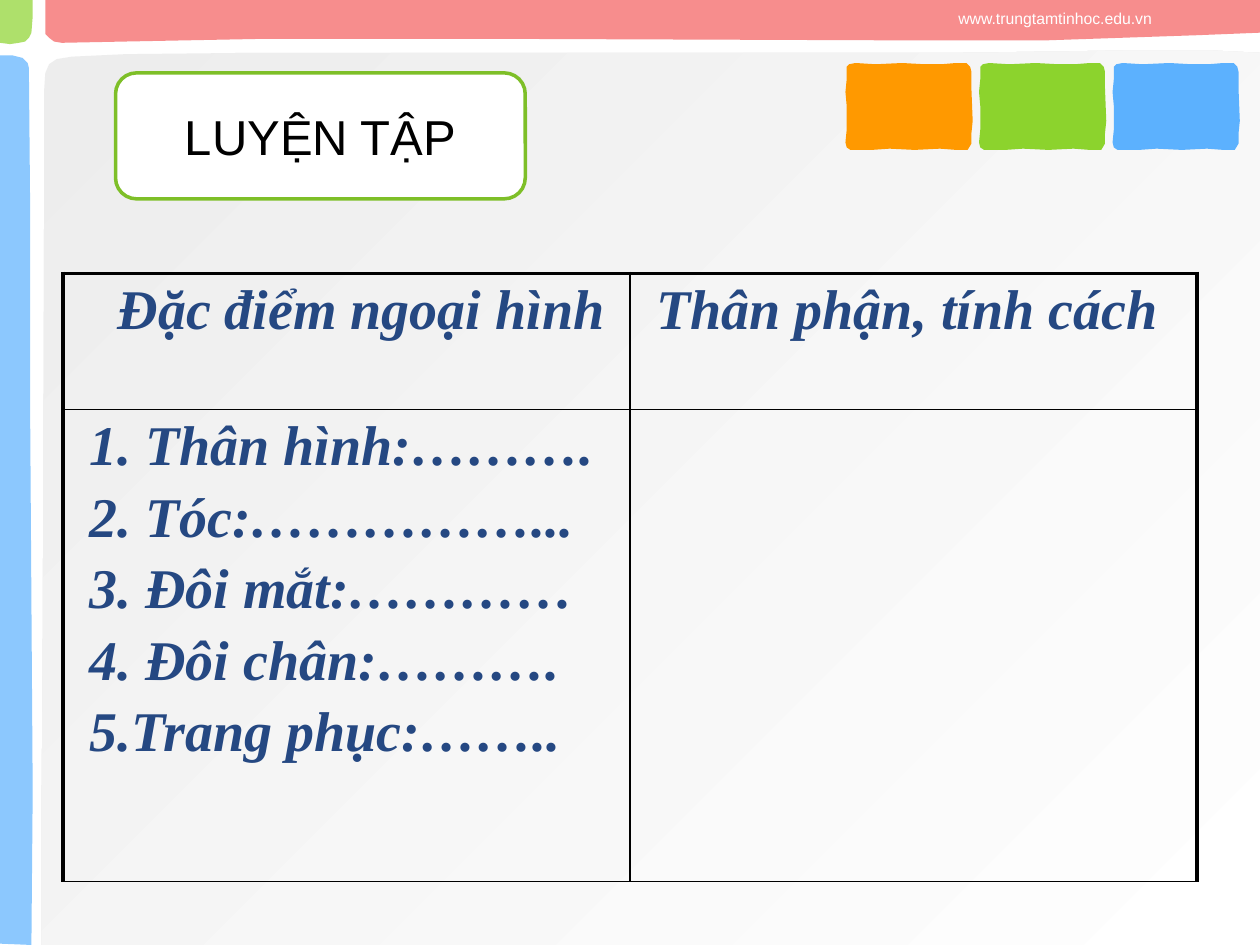
"""Build the practice slide on character appearance and personality."""
from lxml import etree
from pptx import Presentation
from pptx.dml.color import RGBColor
from pptx.enum import shapes, text
from pptx.oxml import ns
from pptx.util import Cm, Pt

COLOURS = {
    "sheet": "E6E6E6", "white": "FFFFFF", "black": "000000", "red": "F45E5E",
    "blue": "5CB1FE", "green": "8CD32D", "orange": "FF9900",
    "ink": "254882", "frame": "7EBF28",
}
HUNDREDTH = Cm(2.54) / 100


def write(para, words, size, colour, font="Arial", bold=False, italic=False,
          align=text.PP_ALIGN.LEFT, before=0):
    para.alignment = align
    para.space_before = Pt(before)
    span = para.add_run()
    span.text = words
    span.font.name = font
    span.font.size = Pt(size)
    span.font.bold = bold
    span.font.italic = italic
    span.font.color.rgb = RGBColor.from_string(COLOURS[colour])


def draw(page, points, colours, opacity=100):
    builder = page.shapes.build_freeform(*points[0], scale=HUNDREDTH)
    builder.add_line_segments(points[1:], close=True)
    area = builder.convert_to_shape()
    area.shadow.inherit = False
    area.line.fill.background()
    if len(colours) > 1:
        area.fill.gradient()
        area.fill.gradient_angle = 315
        for stop, name in zip(area.fill.gradient_stops, colours):
            stop.color.rgb = RGBColor.from_string(COLOURS[name])
    else:
        area.fill.solid()
        area.fill.fore_color.rgb = RGBColor.from_string(COLOURS[colours[0]])
    if opacity < 100:
        for tint in area.element.spPr.iter(ns.qn("a:srgbClr")):
            etree.SubElement(tint, ns.qn("a:alpha"), val=str(opacity * 1000))


deck = Presentation()
deck.slide_width, deck.slide_height = Cm(25.4), Cm(19.05)
page = deck.slides.add_slide(deck.slide_layouts[6])

sheet = [(1000, 750), (1000, 42), (960, 40), (900, 40), (760, 42), (433, 42),
         (200, 42), (100, 43), (57, 45), (45, 47), (39, 51), (36, 58), (35, 73),
         (35, 182), (34, 506), (33, 650), (33, 750)]
top_band = [(1000, 0), (1000, 26), (950, 28), (832, 32), (700, 32), (426, 31),
            (203, 31), (100, 33), (49, 34), (43, 33), (39, 30), (36, 27), (36, 0)]
side_band = [(0, 749), (25, 750), (26, 628), (24, 330), (24, 167), (23, 54),
             (22, 50), (18, 46), (10, 44), (0, 44)]
corner = [(0, 0), (26, 0), (26, 13), (25, 26), (23, 30), (20, 33), (15, 34),
          (8, 35), (0, 34)]
draw(page, sheet, ["sheet", "white"], 70)
draw(page, top_band, ["red"], 70)
draw(page, side_band, ["blue"], 70)
draw(page, corner, ["green"], 70)

brick = [(1, 4), (3, 2), (8, 1), (24, 2), (45, 1), (63, 2), (76, 2), (88, 1),
         (96, 1), (99, 4), (100, 8), (100, 21), (101, 47), (100, 57), (100, 65),
         (97, 70), (88, 70), (75, 69), (55, 70), (35, 69), (21, 70), (4, 70),
         (1, 68), (0, 64), (1, 54), (1, 35), (0, 24), (1, 14)]
for column, colour in enumerate(["orange", "green", "blue"]):
    left = 671 + column * 106
    draw(page, [(left + x, 49 + y) for x, y in brick], [colour])

address = page.shapes.add_textbox(Cm(19), Cm(0.05), Cm(4.47), Cm(0.64)).text_frame
address.word_wrap = False
write(address.paragraphs[0], "www.trungtamtinhoc.edu.vn", 9, "white",
      align=text.PP_ALIGN.RIGHT)

table = page.shapes.add_table(2, 2, Cm(1.27), Cm(5.51), Cm(22.86), Cm(12.26)).table
table.first_row = table.horz_banding = False
table.rows[0].height, table.rows[1].height = Cm(2.74), Cm(9.52)
contents = [
    [["Đặc điểm ngoại hình"], ["Thân phận, tính cách"]],
    [["1. Thân hình:……….", "2. Tóc:……………...", "3. Đôi mắt:…………",
      "4. Đôi chân:……….", "5.Trang phục:…….."], []],
]
for r, row in enumerate(contents):
    for c, lines in enumerate(row):
        cell = table.cell(r, c)
        cell.fill.background()
        cell.margin_left = Cm(1.1 if r == c == 0 else 0.53)
        for n, line in enumerate(lines):
            frame = cell.text_frame
            para = frame.add_paragraph() if n else frame.paragraphs[0]
            write(para, line, 32, "ink", font="Times New Roman", bold=True,
                  italic=True, before=5.3 if n else 0)
        thick = {"L": c == 0, "R": c == 1, "T": r == 0, "B": False}
        properties = cell._tc.get_or_add_tcPr()
        for place, (side, heavy) in enumerate(thick.items()):
            border = etree.Element(ns.qn(f"a:ln{side}"), w=str(Pt(2.25 if heavy else 1)))
            solid = etree.SubElement(border, ns.qn("a:solidFill"))
            etree.SubElement(solid, ns.qn("a:srgbClr"), val=COLOURS["black"])
            properties.insert(place, border)

title = page.shapes.add_shape(shapes.MSO_SHAPE.ROUNDED_RECTANGLE,
                              Cm(2.33), Cm(1.47), Cm(8.26), Cm(2.54))
title.shadow.inherit = False
title.fill.solid()
title.fill.fore_color.rgb = RGBColor.from_string(COLOURS["white"])
title.line.color.rgb = RGBColor.from_string(COLOURS["frame"])
title.line.width = Pt(2)
title.text_frame.vertical_anchor = text.MSO_ANCHOR.MIDDLE
write(title.text_frame.paragraphs[0], "LUYỆN TẬP", 28, "black",
      align=text.PP_ALIGN.CENTER)

deck.save("out.pptx")
